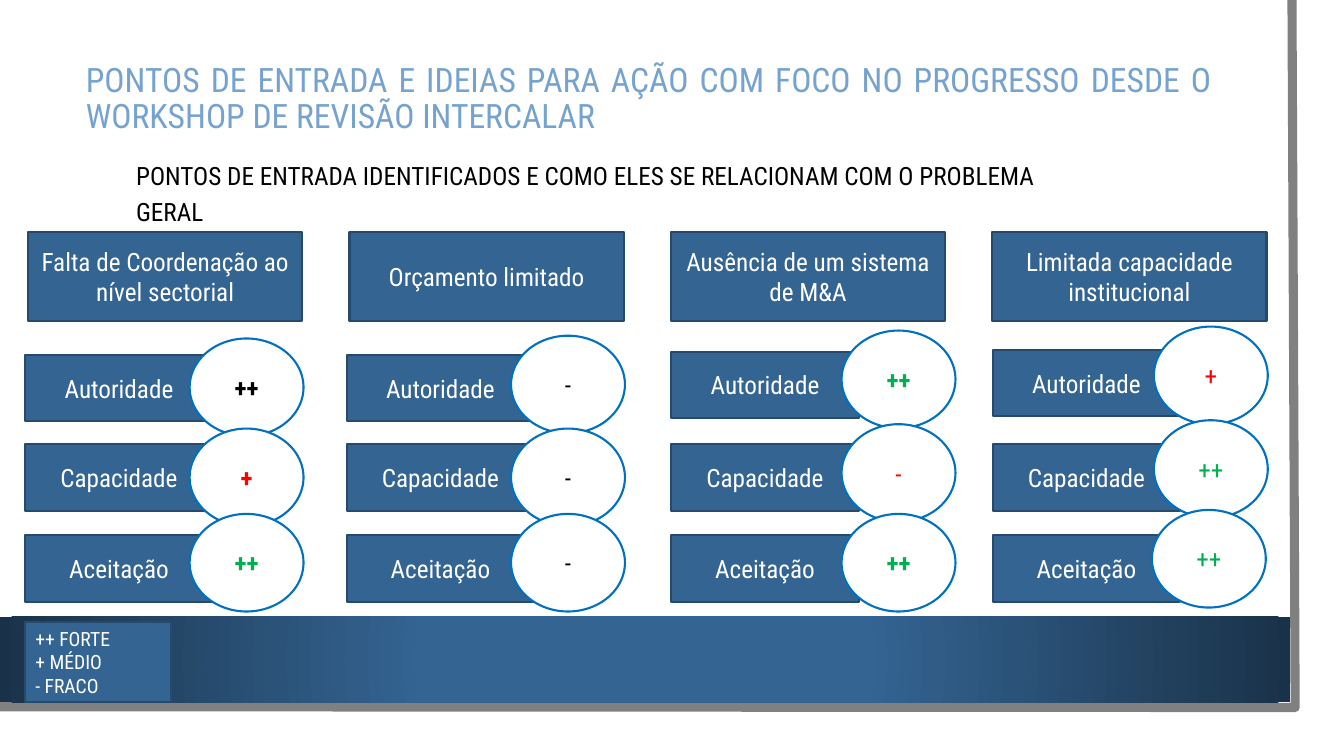
from dataclasses import dataclass
from typing import Any

from lxml import etree
from pptx import Presentation
from pptx import util as u
from pptx.dml.color import RGBColor
from pptx.enum import shapes, text
from pptx.oxml import ns

BLUE = RGBColor(0x34, 0x64, 0x92)
NAVY = RGBColor(0x26, 0x4A, 0x6C)
DARK = RGBColor(0x1A, 0x32, 0x49)
SKY = RGBColor(0x75, 0xA2, 0xCE)
RIM = RGBColor(0x00, 0x70, 0xC0)
GREY = RGBColor(0x80, 0x80, 0x80)
WHITE = RGBColor(0xFF, 0xFF, 0xFF)
BLACK = RGBColor(0x00, 0x00, 0x00)
RED = RGBColor(0xFF, 0x00, 0x00)
GREEN = RGBColor(0x00, 0xB0, 0x50)

RECTANGLE = shapes.MSO_SHAPE.RECTANGLE
OVAL = shapes.MSO_SHAPE.OVAL
CENTER = text.PP_ALIGN.CENTER
LEFT = text.PP_ALIGN.LEFT
FONT = "Roboto Condensed"
FRAME = {
    "word_wrap": True,
    "auto_size": text.MSO_AUTO_SIZE.NONE,
    "vertical_anchor": text.MSO_ANCHOR.MIDDLE,
}
CRITERIA = ("Autoridade", "Capacidade", "Aceitação")


@dataclass(frozen=True)
class Area:
    left: float
    top: float
    width: float
    height: float

    def lengths(self) -> tuple[u.Length, ...]:
        return tuple(u.Cm(n) for n in (self.left, self.top, self.width, self.height))


@dataclass(frozen=True)
class Rating:
    mark: str
    color: RGBColor
    left: float
    top: float
    bold: bool = False


@dataclass(frozen=True)
class Problem:
    heading: str
    bar_left: float
    first_bar_top: float
    ratings: tuple[Rating, ...]


PROBLEMS = (
    Problem("Falta de Coordenação ao nível sectorial", 0.64, 8.94, (
        Rating("++", BLACK, 4.78, 8.53, True),
        Rating("+", RED, 4.78, 10.8, True),
        Rating("++", GREEN, 4.78, 12.95, True),
    )),
    Problem("Orçamento limitado", 8.74, 8.94, (
        Rating("-", BLACK, 12.88, 8.46),
        Rating("-", BLACK, 12.88, 10.8),
        Rating("-", BLACK, 12.88, 12.95),
    )),
    Problem("Ausência de um sistema de M&A", 16.92, 8.86, (
        Rating("++", GREEN, 21.21, 8.33, True),
        Rating("-", RED, 21.21, 10.69),
        Rating("++", GREEN, 21.21, 12.95, True),
    )),
    Problem("Limitada capacidade institucional", 25.02, 8.81, (
        Rating("+", RED, 29.08, 8.23),
        Rating("++", GREEN, 29.08, 10.59),
        Rating("++", GREEN, 29.03, 12.85),
    )),
)


def set_values(target: Any, values: dict[str, Any]) -> None:
    for name, value in values.items():
        setattr(target, name, value)


def write(box: Any, lines: tuple[str, ...], color: RGBColor, size: int = 18,
          bold: bool = False, **layout: Any) -> None:
    set_values(box.text_frame, FRAME)
    for number, line in enumerate(lines):
        para = box.text_frame.add_paragraph() if number else box.text_frame.paragraphs[0]
        set_values(para, layout)
        span = para.add_run()
        span.text = line
        set_values(span.font, {"name": FONT, "size": u.Pt(size), "bold": bold})
        span.font.color.rgb = color


def add_box(page: Any, kind: shapes.MSO_SHAPE, area: Area, fill: RGBColor, line: RGBColor) -> Any:
    box = page.shapes.add_shape(kind, *area.lengths())
    box.shadow.inherit = False
    box.fill.solid()
    box.fill.fore_color.rgb = fill
    box.line.color.rgb = line
    box.line.width = u.Pt(1.5)
    return box


def add_edge(page: Any) -> None:
    builder = page.shapes.build_freeform(u.Cm(32.56), 0)
    corners = [(u.Cm(32.64), u.Cm(17.83)), (u.Cm(-0.08), u.Cm(17.81))]
    builder.add_line_segments(corners, close=False)
    edge = builder.convert_to_shape()
    edge.shadow.inherit = False
    edge.fill.background()
    edge.line.color.rgb = GREY
    edge.line.width = u.Pt(6.5)


def add_band(page: Any) -> None:
    band = page.shapes.add_shape(RECTANGLE, *Area(0, 15.54, 32.51, 2.16).lengths())
    band.shadow.inherit = False
    band.line.fill.background()
    band.fill.gradient()
    for stop, position, color in zip(band.fill.gradient_stops, (0.34, 1), (BLUE, DARK)):
        stop.color.rgb = color
        stop.position = position
    gradient = band.element.spPr.find(ns.qn("a:gradFill"))
    gradient.remove(gradient.find(ns.qn("a:lin")))
    circle = etree.SubElement(gradient, ns.qn("a:path"), {"path": "circle"})
    etree.SubElement(circle, ns.qn("a:fillToRect"), dict.fromkeys("ltrb", "50000"))


def add_titles(page: Any) -> None:
    title = page.shapes.title
    area = Area(1.91, 1.37, 28.88, 2.29)
    set_values(title, dict(zip(("left", "top", "width", "height"), area.lengths())))
    heading = "PONTOS DE ENTRADA E IDEIAS PARA AÇÃO COM FOCO NO PROGRESSO DESDE O WORKSHOP DE REVISÃO INTERCALAR"
    write(title, (heading,), SKY, 24, alignment=text.PP_ALIGN.JUSTIFY, line_spacing=0.9)

    subtitle = page.shapes.add_textbox(*Area(1.91, 4.14, 25.65, 1.3).lengths())
    subtitle.text_frame.margin_left = u.Cm(1.52)
    subheading = "PONTOS DE ENTRADA IDENTIFICADOS E COMO ELES SE RELACIONAM COM O PROBLEMA GERAL"
    write(subtitle, (subheading,), BLACK, alignment=LEFT, line_spacing=1.2)


def add_problem(page: Any, column: int, problem: Problem) -> None:
    header = add_box(page, RECTANGLE, Area(0.71 + 8.1 * column, 5.84, 6.91, 2.24), BLUE, NAVY)
    write(header, (problem.heading,), WHITE, alignment=CENTER)
    bar_tops = (problem.first_bar_top, 11.2, 13.49)
    for criterion, top in zip(CRITERIA, bar_tops):
        bar = add_box(page, RECTANGLE, Area(problem.bar_left, top, 4.72, 1.68), BLUE, NAVY)
        write(bar, (criterion,), WHITE, alignment=CENTER)
    for rating in problem.ratings:
        badge = add_box(page, OVAL, Area(rating.left, rating.top, 2.87, 2.46), WHITE, RIM)
        write(badge, (rating.mark,), rating.color, bold=rating.bold, alignment=CENTER)


def main() -> None:
    deck = Presentation()
    deck.slide_width, deck.slide_height = u.Cm(33.87), u.Cm(19.05)
    page = deck.slides.add_slide(deck.slide_layouts.get_by_name("Title Only"))
    add_edge(page)
    add_band(page)
    add_titles(page)
    for column, problem in enumerate(PROBLEMS):
        add_problem(page, column, problem)
    legend = add_box(page, RECTANGLE, Area(0.64, 15.67, 3.68, 2.03), BLUE, NAVY)
    write(legend, ("++ FORTE", "+ MÉDIO", "- FRACO"), WHITE, 14, alignment=LEFT)
    deck.save("out.pptx")


if __name__ == "__main__":
    main()
